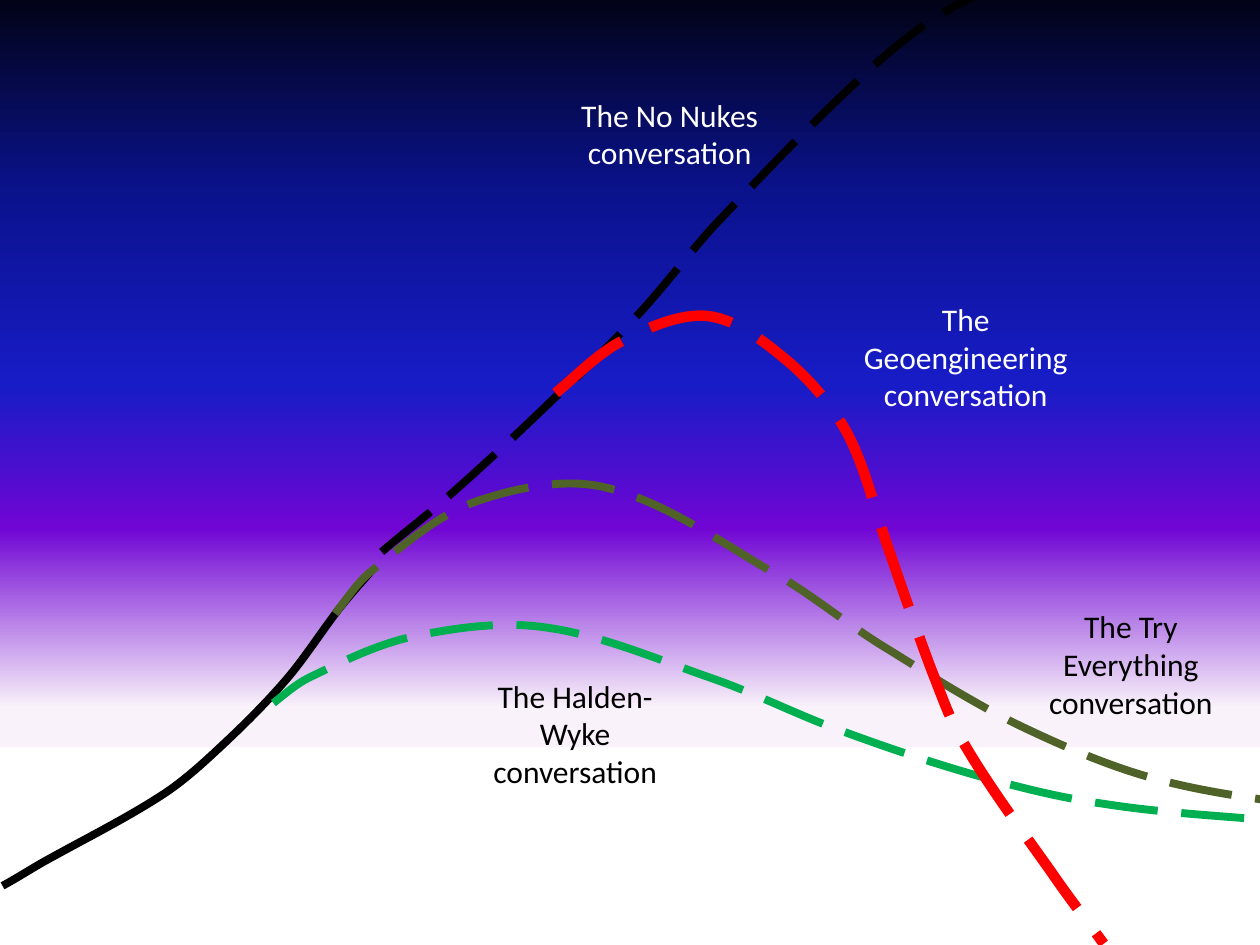
from math import dist
from lxml import etree
from pptx import Presentation
from pptx import util as u
from pptx.dml.color import RGBColor as Rgb
from pptx.enum import dml, shapes, text
from pptx.oxml import ns

PX = 9144
HUES = {"black": "000000", "white": "FFFFFF", "navy": "0A128C", "blue": "181CC7",
        "purple": "7005D4", "pale": "F9F2FA", "green": "00B050", "olive": "4F6228",
        "red": "FF0000"}


def slope(knots, i):
    last = knots[max(i - 1, 0)]
    ahead = knots[min(i + 1, len(knots) - 1)]
    span = dist(last, knots[i]) + dist(knots[i], ahead)
    return (ahead[0] - last[0]) / span, (ahead[1] - last[1]) / span


def shift(knot, way, reach):
    return round(knot[0] + way[0] * reach), round(knot[1] + way[1] * reach)


deck = Presentation()
deck.slide_width, deck.slide_height = 1000 * PX, 750 * PX
slide = deck.slides.add_slide(deck.slide_layouts[6])

sky = slide.shapes.add_shape(shapes.MSO_SHAPE.RECTANGLE, -9 * PX, -29 * PX, 1039 * PX, 622 * PX)
sky.shadow.inherit = False
sky.line.fill.background()
sky.fill.gradient()
sky.fill.gradient_angle = 270
stops = sky._element.spPr.find(".//" + ns.qn("a:gsLst"))
for old in list(stops):
    stops.remove(old)
for pos, hue in [(0, "black"), (29, "navy"), (54, "blue"), (72, "purple"), (95, "pale")]:
    stop = etree.SubElement(stops, ns.qn("a:gs"), pos=str(pos * 1000))
    etree.SubElement(stop, ns.qn("a:srgbClr"), val=HUES[hue])

curves = [
    ("black", 4.5, False, [(2, 703), (40, 681), (127, 632), (179, 589), (230, 536),
                           (270, 482), (294, 454)]),
    ("green", 4.5, True, [(217, 558), (245, 538), (329, 505), (433, 498), (564, 538),
                          (657, 576), (770, 614), (876, 638), (1030, 653)]),
    ("olive", 4.5, True, [(266, 487), (294, 454), (378, 398), (481, 387), (613, 454),
                          (706, 516), (818, 580), (924, 620), (1079, 646)]),
    ("black", 4.5, True, [(303, 438), (349, 400), (440, 316), (509, 247), (567, 179),
                          (683, 62), (752, 8), (846, -34)]),
    ("red", 6, True, [(441, 312), (493, 271), (563, 251), (628, 289), (672, 343),
                      (705, 435), (739, 531), (765, 590), (835, 693), (876, 749)]),
]
for hue, wide, dashed, knots in curves:
    dots = []
    for i, (here, goal) in enumerate(zip(knots, knots[1:])):
        reach = dist(here, goal) / 3
        dots += [shift(here, slope(knots, i), reach),
                 shift(goal, slope(knots, i + 1), -reach), goal]
    pen = slide.shapes.build_freeform(*knots[0], scale=PX)
    pen.add_line_segments(dots, close=False)
    curve = pen.convert_to_shape()
    curve.shadow.inherit = False
    curve.fill.background()
    curve.line.color.rgb = Rgb.from_string(HUES[hue])
    curve.line.width = u.Pt(wide)
    if dashed:
        curve.line.dash_style = dml.MSO_LINE.LONG_DASH
    legs = list(curve._element.iter(ns.qn("a:lnTo")))
    for trio in zip(legs[::3], legs[1::3], legs[2::3]):
        bend = etree.Element(ns.qn("a:cubicBezTo"))
        trio[0].addprevious(bend)
        for leg in trio:
            bend.append(leg[0])
            leg.getparent().remove(leg)

labels = [
    (366, 532, 181, 71, "black", "The Halden-Wyke conversation"),
    (441, 71, 181, 71, "white", "The No Nukes conversation"),
    (807, 477, 181, 101, "black", "The Try Everything conversation"),
    (658, 233, 217, 101, "white", "The Geoengineering\nconversation"),
]
for left, top, width, height, hue, words in labels:
    box = slide.shapes.add_textbox(left * PX, top * PX, width * PX, height * PX)
    frame = box.text_frame
    frame.word_wrap = True
    frame.auto_size = text.MSO_AUTO_SIZE.SHAPE_TO_FIT_TEXT
    frame.text = words
    for para in frame.paragraphs:
        para.alignment = text.PP_ALIGN.CENTER
        for run in para.runs:
            run.font.name = "Calibri"
            run.font.size = u.Pt(18)
            run.font.color.rgb = Rgb.from_string(HUES[hue])

deck.save("out.pptx")
